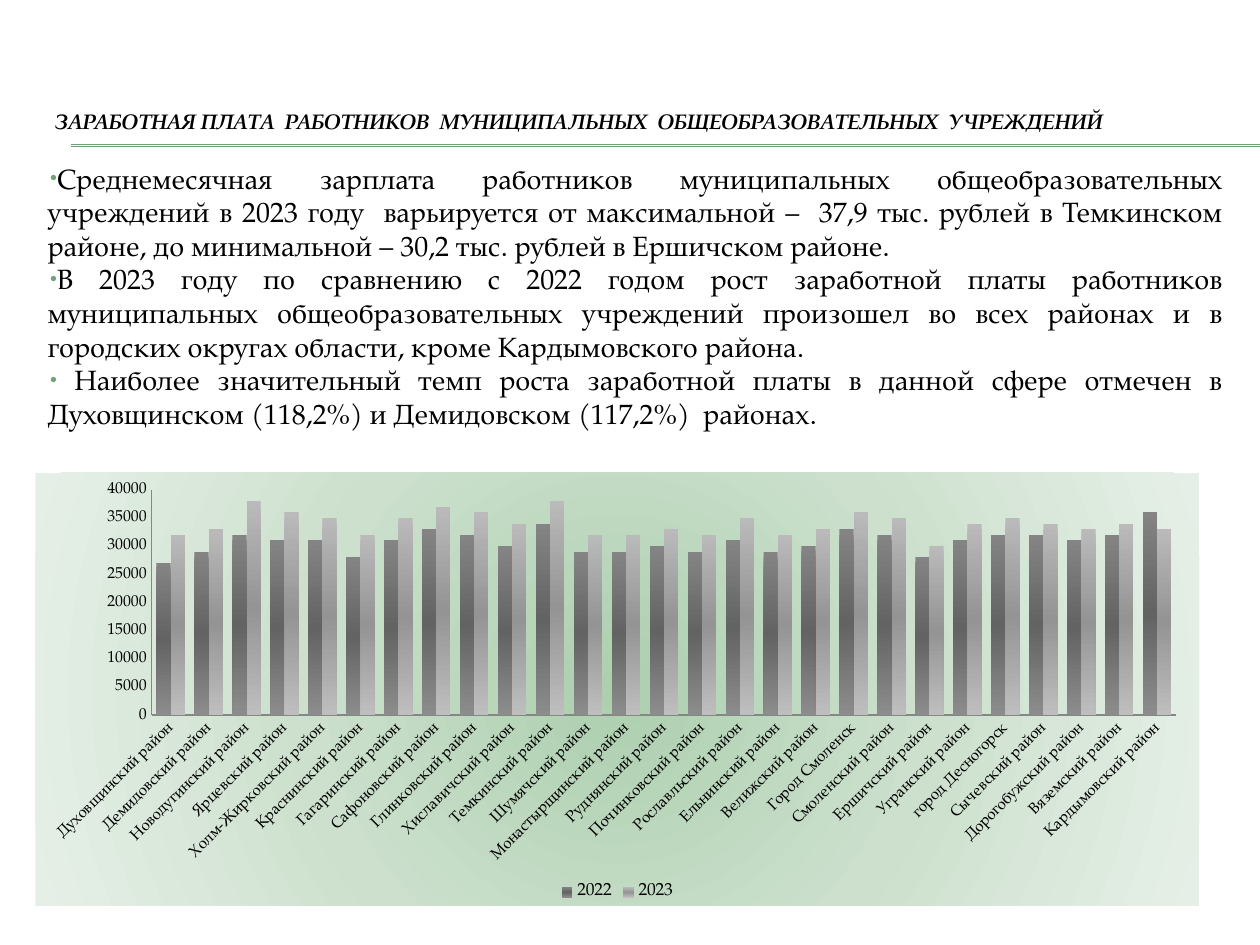
from lxml.etree import SubElement
from pptx import Presentation
from pptx.chart.data import CategoryChartData
from pptx.dml.color import RGBColor
from pptx.enum.chart import XL_CHART_TYPE, XL_LEGEND_POSITION, XL_TICK_MARK
from pptx.enum.shapes import MSO_CONNECTOR
from pptx.enum.text import MSO_ANCHOR, PP_ALIGN
from pptx.oxml import parse_xml
from pptx.oxml.ns import nsdecls, qn
from pptx.util import Inches, Pt

THEME = {
    "font": "TeX Gyre Pagella",
    "text": "000000", "accent": "72A376", "axis": "868686",
    "title": 12, "body": 16, "axis_size": 9, "legend_size": 10,
    "panel": [(0, "ADCFAF"), (50, "CCE0CD"), (100, "E6EFE7")],
    "bars": [
        [(0, "848484"), (50, "636363"), (100, "8C8C8C")],
        [(0, "BABABA"), (50, "949494"), (100, "BEBEBE")],
    ],
}

STATEMENTS = [
    "Среднемесячная зарплата работников муниципальных общеобразовательных учреждений "
    "в 2023 году  варьируется от максимальной –  37,9 тыс. рублей в Темкинском районе, "
    "до минимальной – 30,2 тыс. рублей в Ершичском районе.",
    "В 2023 году по сравнению с 2022 годом рост заработной платы работников муниципальных "
    "общеобразовательных учреждений произошел во всех районах и в городских округах "
    "области, кроме Кардымовского района.",
    " Наиболее значительный темп роста заработной платы в данной сфере отмечен в "
    "Духовщинском (118,2%) и Демидовском (117,2%)  районах.",
]

# District, thousand roubles in 2022, thousand roubles in 2023
SALARIES = [
    ("Духовщинский район", 27, 32), ("Демидовский район", 29, 33),
    ("Новодугинский район", 32, 38), ("Ярцевский район", 31, 36),
    ("Холм-Жирковский район", 31, 35), ("Краснинский район", 28, 32),
    ("Гагаринский район", 31, 35), ("Сафоновский район", 33, 37),
    ("Глинковский район", 32, 36), ("Хиславичский район", 30, 34),
    ("Темкинский район", 34, 38), ("Шумячский район", 29, 32),
    ("Монастырщинский район", 29, 32), ("Руднянский район", 30, 33),
    ("Починковский район", 29, 32), ("Рославльский район", 31, 35),
    ("Ельнинский район", 29, 32), ("Велижский район", 30, 33),
    ("Город Смоленск", 33, 36), ("Смоленский район", 32, 35),
    ("Ершичский район", 28, 30), ("Угранский район", 31, 34),
    ("город Десногорск", 32, 35), ("Сычевский район", 32, 34),
    ("Дорогобужский район", 31, 33), ("Вяземский район", 32, 34),
    ("Кардымовский район", 36, 33),
]


def write(paragraph, text, size, bold=False, italic=False, align=PP_ALIGN.LEFT):
    run = paragraph.add_run()
    run.text = text
    paragraph.alignment = align
    paragraph.space_before = Pt(0)
    run.font.name = THEME["font"]
    run.font.size = Pt(size)
    run.font.bold, run.font.italic = bold, italic
    run.font.color.rgb = RGBColor.from_string(THEME["text"])


def gradient(stops, direction):
    """Return gradFill markup for (percent, colour) stops."""
    marks = "".join(f'<a:gs pos="{percent * 1000}"><a:srgbClr val="{colour}"/></a:gs>'
                    for percent, colour in stops)
    return f"<a:gradFill><a:gsLst>{marks}</a:gsLst>{direction}</a:gradFill>"


prs = Presentation()
prs.slide_width, prs.slide_height = Inches(10), Inches(7.5)
column, row = prs.slide_width / 100, prs.slide_height / 100
slide = prs.slides.add_slide(prs.slide_layouts[5])

# Double rule under the heading
for level in (15.33, 15.47):
    rule = slide.shapes.add_connector(
        MSO_CONNECTOR.STRAIGHT, int(5.6 * column), int(level * row),
        prs.slide_width, int(level * row))
    rule.line.color.rgb = RGBColor.from_string(THEME["accent"])
    rule.line.width = Pt(0.75)
    SubElement(rule.line._get_or_add_ln().getparent(), qn("a:effectLst"))

# Heading
heading = slide.shapes.title
heading.left, heading.top = int(3.3 * column), int(6.67 * row)
heading.width, heading.height = int(95 * column), int(12.27 * row)
heading.text_frame.vertical_anchor = MSO_ANCHOR.MIDDLE
write(heading.text_frame.paragraphs[0],
      "ЗАРАБОТНАЯ ПЛАТА  РАБОТНИКОВ  МУНИЦИПАЛЬНЫХ  ОБЩЕОБРАЗОВАТЕЛЬНЫХ  УЧРЕЖДЕНИЙ",
      THEME["title"], bold=True, italic=True)

# Bulleted statements
summary = slide.shapes.add_textbox(int(2.8 * column), int(16.4 * row),
                                   int(95.3 * column), int(35.73 * row)).text_frame
summary.word_wrap = True
for index, statement in enumerate(STATEMENTS):
    paragraph = summary.add_paragraph() if index else summary.paragraphs[0]
    properties = paragraph._p.get_or_add_pPr()
    properties.set("marL", "0")
    properties.set("indent", str(Inches(0.02)))
    bullet_colour = SubElement(properties, qn("a:buClr"))
    SubElement(bullet_colour, qn("a:srgbClr"), val=THEME["accent"])
    SubElement(properties, qn("a:buSzPct"), val="70000")
    SubElement(properties, qn("a:buFont"), typeface="Arial")
    SubElement(properties, qn("a:buChar"), char="•")
    write(paragraph, statement, THEME["body"], align=PP_ALIGN.JUSTIFY)

# Salary chart
districts, *yearly = zip(*SALARIES)
salary_data = CategoryChartData(number_format="General")
salary_data.categories = districts
for year, salaries in zip(("2022", "2023"), yearly):
    salary_data.add_series(year, [salary * 1000 for salary in salaries])
chart = slide.shapes.add_chart(
    XL_CHART_TYPE.COLUMN_CLUSTERED, int(2.8 * column), int(50 * row),
    int(92.4 * column), int(45.87 * row), salary_data).chart
chart.has_title = False
chart.font.name = THEME["font"]
chart.font.size = Pt(18)
chart.font.color.rgb = RGBColor.from_string(THEME["text"])

chart.has_legend = True
chart.legend.position = XL_LEGEND_POSITION.BOTTOM
chart.legend.include_in_layout = False
chart.legend.font.size = Pt(THEME["legend_size"])

plot = chart.plots[0]
plot.gap_width, plot.overlap = 67, 0
plot.vary_by_categories = False
for series, stops in zip(plot.series, THEME["bars"]):
    series.format.fill.solid()
    bar_properties = series.format.fill._xPr
    bar_properties.replace(bar_properties.find(qn("a:solidFill")), parse_xml(
        gradient(stops, '<a:lin ang="5400000" scaled="0"/>').replace(
            "<a:gradFill>", f'<a:gradFill {nsdecls("a")}>', 1)))

for axis in (chart.category_axis, chart.value_axis):
    axis.major_tick_mark = axis.minor_tick_mark = XL_TICK_MARK.NONE
    axis.has_major_gridlines = False
    axis.tick_labels.font.size = Pt(THEME["axis_size"])
    axis.format.line.color.rgb = RGBColor.from_string(THEME["axis"])
    axis.format.line.width = Pt(0.75)
chart.value_axis.minimum_scale, chart.value_axis.maximum_scale = 0, 40000
chart.value_axis.major_unit = 5000
label_body = chart.category_axis._element.find(qn("c:txPr")).find(qn("a:bodyPr"))
label_body.set("rot", "-2700000")
label_body.set("vert", "horz")

# Plot position as shares of the chart, and the radial panel behind it
chart_part = chart._chartSpace.find(qn("c:chart"))
plot_area = chart_part.find(qn("c:plotArea"))
for old_layout in plot_area.findall(qn("c:layout")):
    plot_area.remove(old_layout)
layout = SubElement(plot_area, qn("c:layout"))
plot_area.insert(0, layout)
manual = SubElement(layout, qn("c:manualLayout"))
for tag, value in (("layoutTarget", "inner"), ("xMode", "edge"), ("yMode", "edge"),
                   ("x", "0.1"), ("y", "0.04"), ("w", "0.88"), ("h", "0.52")):
    SubElement(manual, qn(f"c:{tag}"), val=value)
centre = ('<a:path path="circle">'
          '<a:fillToRect l="50000" t="50000" r="50000" b="50000"/></a:path>')
chart_part.addnext(parse_xml(
    f'<c:spPr {nsdecls("c", "a")}>{gradient(THEME["panel"], centre)}'
    "<a:ln><a:noFill/></a:ln></c:spPr>"))

prs.save("out.pptx")
